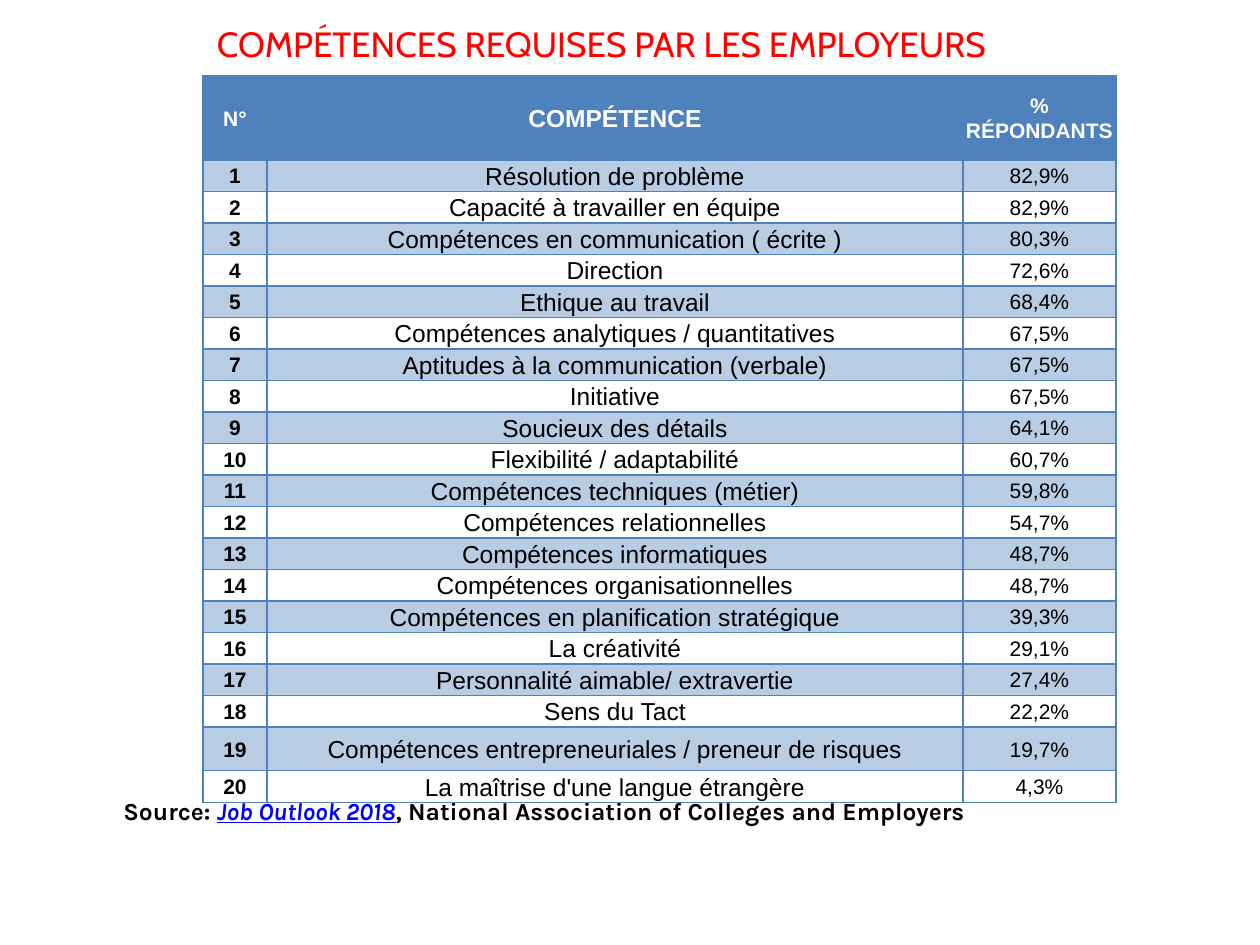
from pptx import Presentation
from pptx.dml.color import RGBColor
from pptx.enum.text import MSO_ANCHOR as Anchor, PP_ALIGN as Align
from pptx.oxml.ns import qn
from pptx.oxml.xmlchemy import OxmlElement
from pptx.util import Emu, Pt

EMU_PER_PX = 914400 / 126
COLORS = {
    "title": "FF0000",
    "table": "4F81BD",
    "header_text": "FFFFFF",
    "text": "000000",
    "link": "0000FF",
}
TABLE_FONT = "Arial"
COLUMN_WIDTHS = (64, 696, 153)
COLUMN_SIZES = (12, 14, 12)
HEADERS = ("N°", "COMPÉTENCE", "% RÉPONDANTS")
HEADER_HEIGHT = 84
TALL_ROW = 19
TALL_ROW_HEIGHT = 44
SKILLS = (
    ("Résolution de problème", "82,9%"),
    ("Capacité à travailler en équipe", "82,9%"),
    ("Compétences en communication ( écrite )", "80,3%"),
    ("Direction", "72,6%"),
    ("Ethique au travail", "68,4%"),
    ("Compétences analytiques / quantitatives", "67,5%"),
    ("Aptitudes à la communication (verbale)", "67,5%"),
    ("Initiative", "67,5%"),
    ("Soucieux des détails", "64,1%"),
    ("Flexibilité / adaptabilité", "60,7%"),
    ("Compétences techniques (métier)", "59,8%"),
    ("Compétences relationnelles", "54,7%"),
    ("Compétences informatiques", "48,7%"),
    ("Compétences organisationnelles", "48,7%"),
    ("Compétences en planification stratégique", "39,3%"),
    ("La créativité", "29,1%"),
    ("Personnalité aimable/ extravertie", "27,4%"),
    ("Sens du Tact", "22,2%"),
    ("Compétences entrepreneuriales / preneur de risques", "19,7%"),
    ("La maîtrise d'une langue étrangère", "4,3%"),
)


def px(length):
    """Turn a length in px into EMU."""
    return Emu(round(length * EMU_PER_PX))


def color(name):
    """Return the named colour."""
    return RGBColor.from_string(COLORS[name])


def format_font(font, name, size, color_name, bold=False):
    """Set the typeface, size, colour and weight of a font."""
    font.name = name
    font.size = Pt(size)
    font.bold = bold
    font.color.rgb = color(color_name)


def add_title(slide, left, top, width, height):
    """Place the slide title in the given box."""
    title = slide.shapes.title
    title.left, title.top = px(left), px(top)
    title.width, title.height = px(width), px(height)
    frame = title.text_frame
    frame.text = "COMPÉTENCES REQUISES PAR LES EMPLOYEURS"
    frame.vertical_anchor = Anchor.TOP
    paragraph = frame.paragraphs[0]
    paragraph.alignment = Align.CENTER
    format_font(paragraph.font, "Cabin", 20, "title")


def add_borders(cell):
    """Outline a table cell on all four sides."""
    properties = cell._tc.get_or_add_tcPr()
    for tag in ("a:lnL", "a:lnR", "a:lnT", "a:lnB"):
        line = OxmlElement(tag)
        line.set("w", str(Pt(0.75)))
        fill = OxmlElement("a:solidFill")
        paint = OxmlElement("a:srgbClr")
        paint.set("val", COLORS["table"])
        fill.append(paint)
        line.append(fill)
        properties.append(line)


def fill_cell(cell, opacity):
    """Fill a cell with the table colour at an opacity in percent."""
    if opacity == 0:
        cell.fill.background()
        return
    cell.fill.solid()
    cell.fill.fore_color.rgb = color("table")
    if opacity < 100:
        paint = cell._tc.tcPr.find(qn("a:solidFill")).find(qn("a:srgbClr"))
        alpha = OxmlElement("a:alpha")
        alpha.set("val", str(opacity * 1000))
        paint.append(alpha)


def format_cell(cell, text, row, column):
    """Write and style one cell according to its row and column."""
    is_header = row == 0
    cell.margin_left = cell.margin_right = cell.margin_top = cell.margin_bottom = 0
    cell.vertical_anchor = Anchor.MIDDLE
    cell.text = text
    paragraph = cell.text_frame.paragraphs[0]
    paragraph.alignment = Align.CENTER
    paragraph.line_spacing = 1.07
    format_font(paragraph.font, TABLE_FONT, COLUMN_SIZES[column],
                "header_text" if is_header else "text", is_header or column == 0)
    add_borders(cell)
    fill_cell(cell, 100 if is_header else 40 * (row % 2))


def add_skills_table(slide, left, top, width, height):
    """Place the ranked skills table in the given box."""
    rows = [HEADERS] + [(str(number), *skill) for number, skill in enumerate(SKILLS, 1)]
    table = slide.shapes.add_table(len(rows), len(HEADERS), px(left), px(top),
                                   px(width), px(height)).table
    table.first_row = table.horz_banding = False
    for column, column_width in zip(table.columns, COLUMN_WIDTHS):
        column.width = px(column_width)
    special_heights = {0: HEADER_HEIGHT, TALL_ROW: TALL_ROW_HEIGHT}
    shared_height = height - sum(special_heights.values())
    row_height = shared_height / (len(rows) - len(special_heights))
    for row, texts in enumerate(rows):
        table.rows[row].height = px(special_heights.get(row, row_height))
        for column, text in enumerate(texts):
            format_cell(table.cell(row, column), text, row, column)


def add_source(slide, left, top, width, height):
    """Place the source line in the given box."""
    frame = slide.shapes.add_textbox(px(left), px(top), px(width), px(height)).text_frame
    frame.word_wrap = True
    paragraph = frame.paragraphs[0]
    parts = (
        ("Source: ", False),
        ("Job Outlook 2018", True),
        (", National Association of Colleges and Employers", False),
    )
    for text, is_reference in parts:
        run = paragraph.add_run()
        run.text = text
        format_font(run.font, "Karla", 14, "link" if is_reference else "text", True)
        run.font.italic = run.font.underline = is_reference


def main():
    """Build and save the slide."""
    presentation = Presentation()
    presentation.slide_width, presentation.slide_height = px(1260), px(945)
    slide = presentation.slides.add_slide(presentation.slide_layouts[5])
    add_source(slide, 111, 790, 1134, 39)
    add_title(slide, 35, 16, 1133, 63)
    add_skills_table(slide, 203, 76, sum(COLUMN_WIDTHS), 711)
    presentation.save("out.pptx")


if __name__ == "__main__":
    main()
